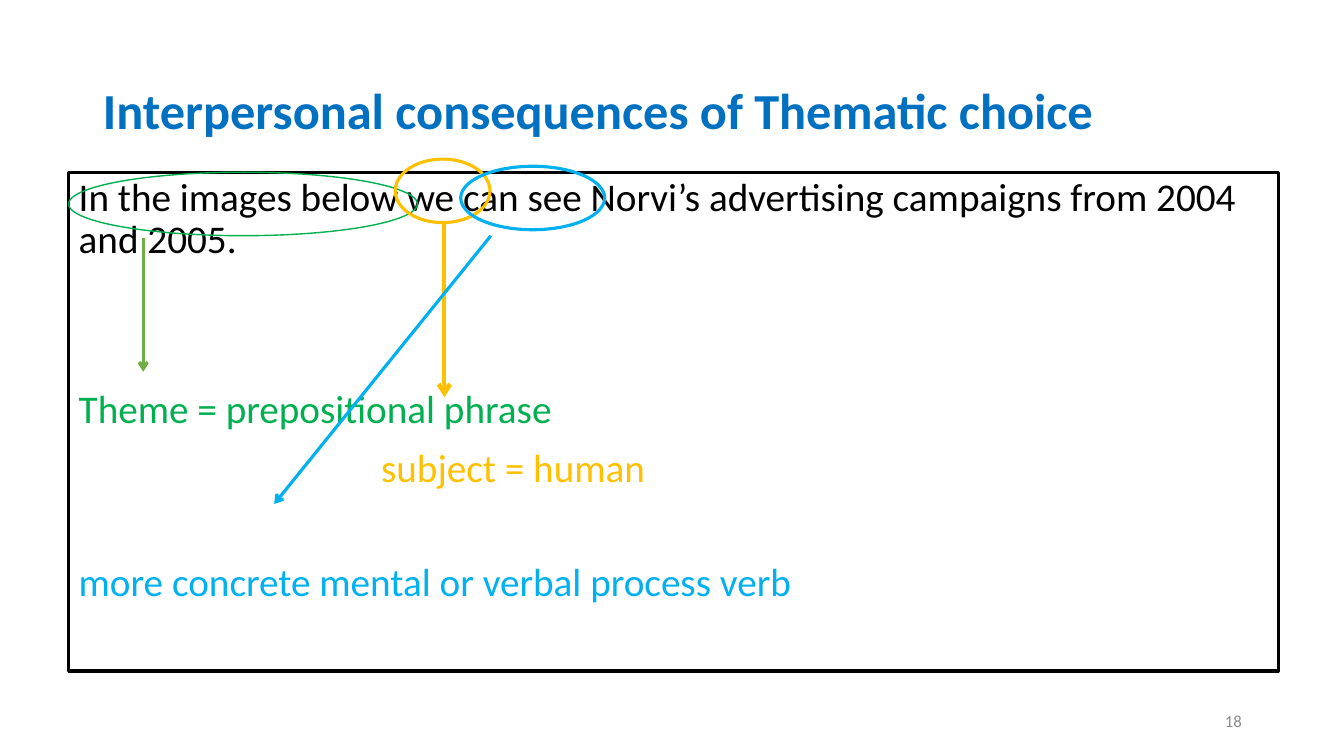
from lxml.etree import SubElement
from pptx import Presentation
from pptx.dml.color import RGBColor
from pptx.enum.shapes import MSO_CONNECTOR as CONN, MSO_SHAPE as SHAPE
from pptx.enum.text import MSO_ANCHOR as ANCHOR, MSO_AUTO_SIZE as FIT, PP_ALIGN as ALIGN
from pptx.oxml.ns import qn
from pptx.util import Cm, Pt

COLORS = {
    "title": "0070C0", "text": "000000", "theme": "00B050", "theme_arrow": "70AD47",
    "subject": "FFC000", "process": "00B0F0", "number": "8C8C8C",
}


class Deck:
    """Holds the style and the current slide, and adds its elements."""

    font = "Calibri"

    def __init__(self):
        """Start a widescreen deck with one title-and-content slide."""
        self.prs = Presentation()
        self.prs.slide_width, self.prs.slide_height = Cm(33.87), Cm(19.05)
        self.s = self.prs.slides.add_slide(self.prs.slide_layouts[1])

    def color(self, name):
        """Return a named colour."""
        return RGBColor.from_string(COLORS[name])

    def place(self, sp, box):
        """Move and size a shape in centimetres."""
        for name, value in zip(("left", "top", "width", "height"), box):
            setattr(sp, name, Cm(value))

    def outline(self, sp, color, width):
        """Set the line of a shape or connector."""
        sp.line.color.rgb = self.color(color)
        sp.line.width = Pt(width)

    def frame(self, sp, anchor):
        """Prepare the text frame of a shape."""
        tf = sp.text_frame
        for name, value in {"word_wrap": True, "auto_size": FIT.NONE, "vertical_anchor": anchor}.items():
            setattr(tf, name, value)
        return tf

    def fill_text(self, p, text, size, color, bold=False, **layout):
        """Fill a paragraph with one formatted run."""
        for name, value in layout.items():
            setattr(p, name, value)
        r = p.add_run()
        r.text = text
        style = {"name": self.font, "size": Pt(size), "bold": bold}
        for name, value in style.items():
            setattr(r.font, name, value)
        r.font.color.rgb = self.color(color)

    def title(self, text, box):
        """Fill the title placeholder."""
        sp = self.s.shapes.title
        self.place(sp, box)
        p = self.frame(sp, ANCHOR.MIDDLE).paragraphs[0]
        self.fill_text(p, text, 36, "title", True, alignment=ALIGN.LEFT, line_spacing=0.9)

    def body(self, items, box):
        """Fill the framed body from (text, colour, space before, indent) items."""
        sp = self.s.placeholders[1]
        self.place(sp, box)
        self.outline(sp, "text", 2.25)
        tf = self.frame(sp, ANCHOR.TOP)
        for i, (text, color, before, indent) in enumerate(items):
            p = tf.add_paragraph() if i else tf.paragraphs[0]
            self.fill_text(p, text, 28, color, line_spacing=0.9, space_before=Pt(before))
            pPr = p._p.get_or_add_pPr()
            pPr.set("marL", str(Cm(indent)))
            pPr.set("indent", "0")
            SubElement(pPr, qn("a:buNone"))

    def ellipse(self, box, color, width):
        """Add an unfilled ellipse."""
        sp = self.s.shapes.add_shape(SHAPE.OVAL, *map(Cm, box))
        sp.shadow.inherit = False
        sp.fill.background()
        self.outline(sp, color, width)

    def arrow(self, ends, color, width):
        """Add a straight line with an open arrowhead at its end."""
        sp = self.s.shapes.add_connector(CONN.STRAIGHT, *map(Cm, ends))
        self.outline(sp, color, width)
        spPr = sp._element.spPr
        SubElement(spPr.find(qn("a:ln")), qn("a:tailEnd"), type="arrow")
        SubElement(spPr, qn("a:effectLst"))

    def number(self, text, box):
        """Add the slide number."""
        sp = self.s.shapes.add_textbox(*map(Cm, box))
        p = self.frame(sp, ANCHOR.MIDDLE).paragraphs[0]
        self.fill_text(p, text, 12, "number", alignment=ALIGN.RIGHT)


def main():
    """Build and save the slide."""
    deck = Deck()
    deck.title("Interpersonal consequences of Thematic choice", (2.34, 1.02, 29.21, 3.68))
    deck.body([
        ("In the images below we can see Norvi’s advertising campaigns from 2004 and 2005.", "text", 10, 0),
        ("Theme = prepositional phrase", "theme", 91, 0),
        ("subject = human", "subject", 12, 7.62),
        ("more concrete mental or verbal process verb", "process", 51, 0),
    ], (1.73, 4.34, 30.48, 12.57))
    for box, color, width in [
        ((1.73, 4.34, 8.79, 1.6), "theme", 1),
        ((9.96, 4.01, 2.39, 1.6), "subject", 2.25),
        ((11.61, 4.19, 3.63, 1.6), "process", 2.25),
    ]:
        deck.ellipse(box, color, width)
    for ends, color, width in [
        ((3.61, 5.99, 3.61, 9.37), "theme_arrow", 2.25),
        ((11.2, 5.61, 11.2, 10.01), "subject", 3),
        ((12.37, 5.94, 6.91, 12.7), "process", 2.25),
    ]:
        deck.arrow(ends, color, width)
    deck.number("18", (23.93, 17.65, 7.62, 1.02))
    deck.prs.save("out.pptx")


if __name__ == "__main__":
    main()
